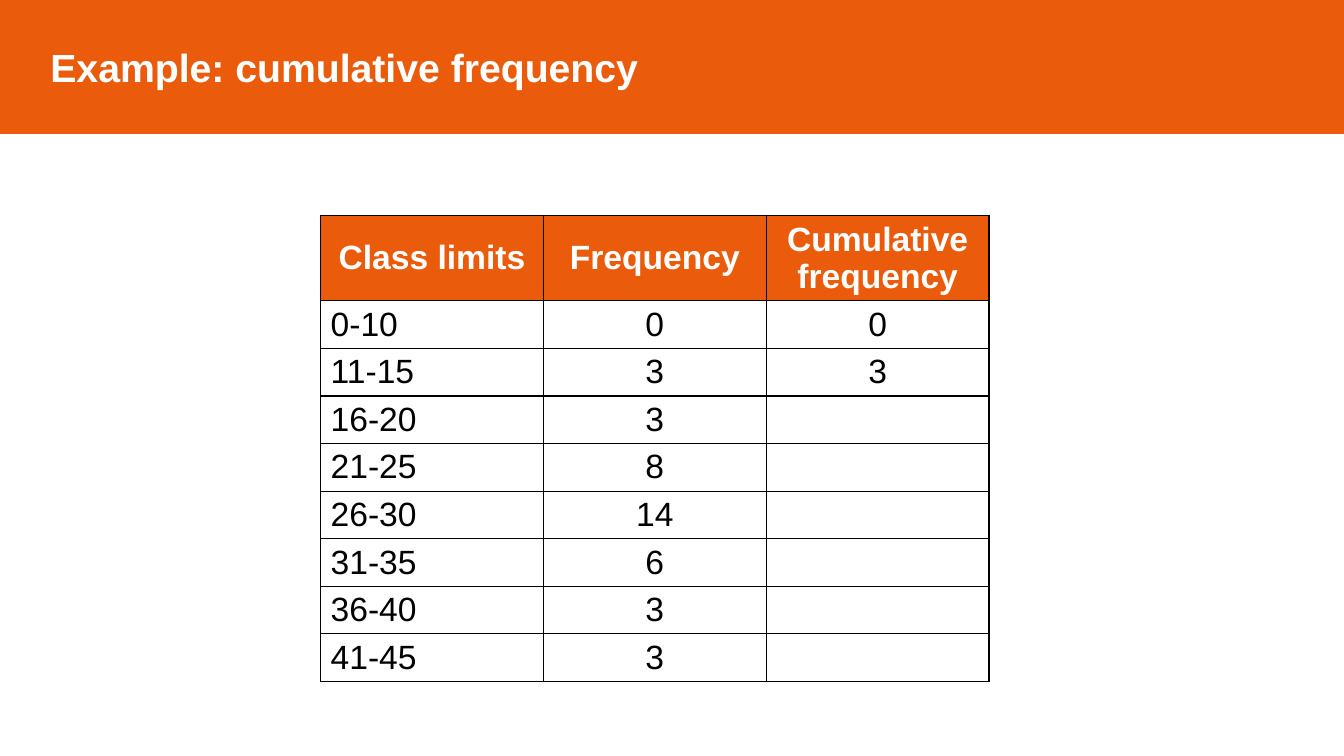
"""Build a slide showing a partly completed cumulative frequency table."""
from dataclasses import dataclass

from lxml import etree
from pptx import Presentation
from pptx.dml.color import RGBColor
from pptx.enum.shapes import MSO_SHAPE
from pptx.enum.text import MSO_ANCHOR, PP_ALIGN
from pptx.oxml.ns import qn
from pptx.util import Inches, Pt

RECTANGLE = MSO_SHAPE.RECTANGLE
MIDDLE, TOP = MSO_ANCHOR.MIDDLE, MSO_ANCHOR.TOP
LEFT, CENTER = PP_ALIGN.LEFT, PP_ALIGN.CENTER


@dataclass(frozen=True)
class Theme:
    orange: str = "EA5B0C"
    white: str = "FFFFFF"
    black: str = "000000"
    font: str = "Arial"
    title_size: int = 28
    table_size: int = 24
    line_width: int = 1


theme = Theme()


def format_paragraph(paragraph, size, color, bold, alignment):
    paragraph.alignment = alignment
    for item in [paragraph, *paragraph.runs]:
        item.font.name = theme.font
        item.font.size = Pt(size)
        item.font.bold = bold
        item.font.color.rgb = RGBColor.from_string(color)


def add_borders(cell):
    properties = cell._tc.get_or_add_tcPr()
    for position, side in enumerate(("a:lnL", "a:lnR", "a:lnT", "a:lnB")):
        line = etree.Element(qn(side), w=str(Pt(theme.line_width)))
        fill = etree.SubElement(line, qn("a:solidFill"))
        etree.SubElement(fill, qn("a:srgbClr"), val=theme.black)
        properties.insert(position, line)


presentation = Presentation()
presentation.slide_width = Inches(13.33)
presentation.slide_height = Inches(7.5)
slide = presentation.slides.add_slide(presentation.slide_layouts[6])

banner = slide.shapes.add_shape(RECTANGLE, 0, 0, presentation.slide_width, Inches(1.32))
banner.shadow.inherit = False
banner.fill.solid()
banner.fill.fore_color.rgb = RGBColor.from_string(theme.orange)
banner.line.color.rgb = RGBColor.from_string(theme.orange)
banner.line.width = Pt(theme.line_width)
banner.text_frame.text = "Example: cumulative frequency"
banner.text_frame.margin_left = Inches(0.5)
banner.text_frame.vertical_anchor = MIDDLE
format_paragraph(banner.text_frame.paragraphs[0], theme.title_size, theme.white, True, LEFT)

rows = [
    ("Class limits", "Frequency", "Cumulative frequency"),
    ("0-10", "0", "0"),
    ("11-15", "3", "3"),
    ("16-20", "3", ""),
    ("21-25", "8", ""),
    ("26-30", "14", ""),
    ("31-35", "6", ""),
    ("36-40", "3", ""),
    ("41-45", "3", ""),
]
header_height, body_height, column_width = Inches(0.84), Inches(0.47), Inches(2.21)
table = slide.shapes.add_table(
    len(rows), len(rows[0]), Inches(3.18), Inches(2.14),
    column_width * len(rows[0]), header_height + body_height * (len(rows) - 1),
).table
for column in table.columns:
    column.width = column_width

for row_index, values in enumerate(rows):
    header = row_index == 0
    table.rows[row_index].height = header_height if header else body_height
    for column_index, value in enumerate(values):
        cell = table.cell(row_index, column_index)
        cell.text_frame.text = value
        cell.vertical_anchor = MIDDLE if header else TOP
        cell.fill.solid()
        cell.fill.fore_color.rgb = RGBColor.from_string(theme.orange if header else theme.white)
        add_borders(cell)
        format_paragraph(
            cell.text_frame.paragraphs[0],
            theme.table_size,
            theme.white if header else theme.black,
            header,
            CENTER if header or column_index else LEFT,
        )

presentation.save("out.pptx")
